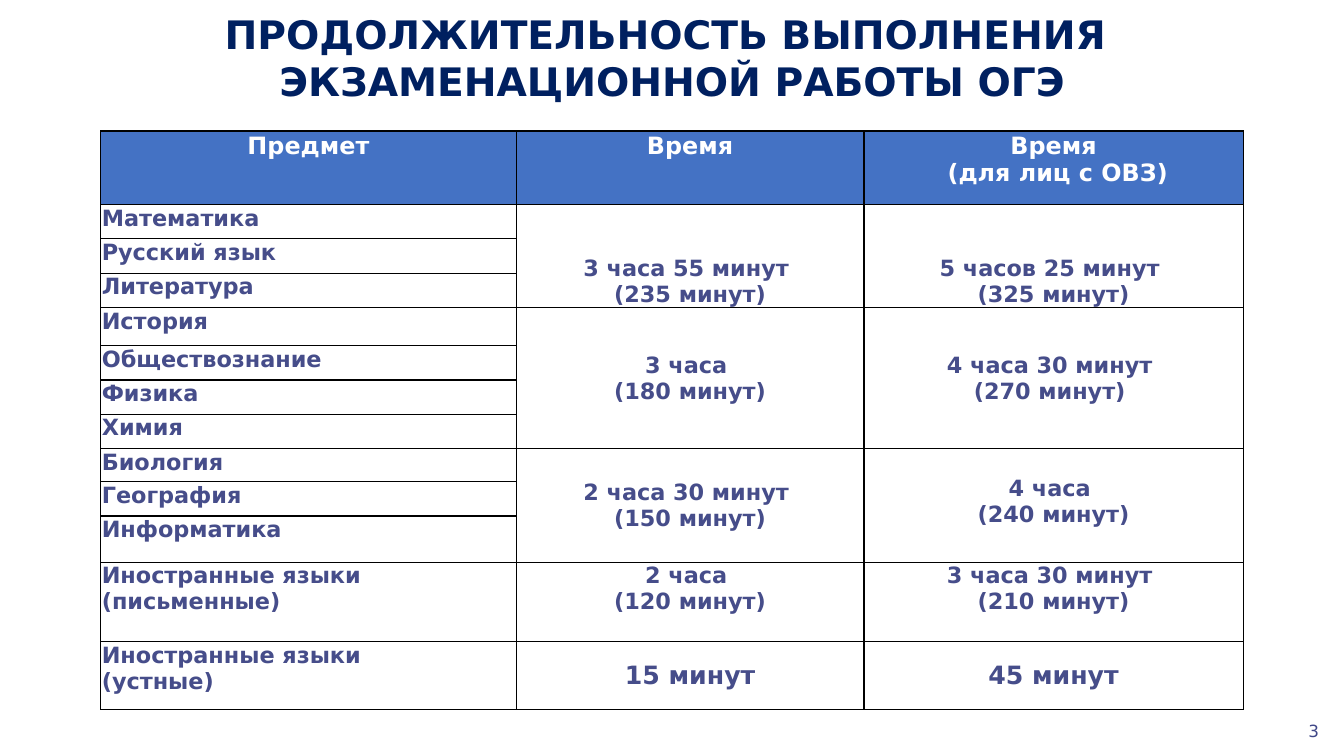
from lxml import etree
from pptx import Presentation
from pptx import util as u
from pptx.dml.color import RGBColor
from pptx.enum import text
from pptx.oxml.ns import qn

FONT = "DejaVu Sans"
COLORS = {
    "title": "002060", "header_fill": "4472C4", "header_text": "FFFFFF",
    "cell_fill": "FFFFFF", "cell_text": "464D8A", "border": "000000",
    "number": "404888",
}
LEFT, CENTER, RIGHT = text.PP_ALIGN.LEFT, text.PP_ALIGN.CENTER, text.PP_ALIGN.RIGHT
TOP, MIDDLE, BOTTOM = (text.MSO_ANCHOR.TOP, text.MSO_ANCHOR.MIDDLE,
                       text.MSO_ANCHOR.BOTTOM)

COLUMN_WIDTHS = [4.12, 3.45, 3.76]
ROW_HEIGHTS = [0.73, 0.34, 0.34, 0.34, 0.38, 0.34, 0.34, 0.34, 0.33, 0.34,
               0.46, 0.79, 0.67]
HEADERS = [["Предмет"], ["Время"], ["Время", " (для лиц с ОВЗ)"]]
CELL_INSET = 0.01
LINE_HEIGHT = 0.26

# Each group: subjects, then (lines, format) for the two time columns
GROUPS = [
    ([["Математика"], ["Русский язык"], ["Литература"]],
     (["3 часа 55 минут ", "(235 минут)"], {"anchor": BOTTOM}),
     (["5 часов 25 минут ", "(325 минут)"], {"anchor": BOTTOM})),
    ([["История"], ["Обществознание"], ["Физика"], ["Химия"]],
     (["3 часа ", "(180 минут)"], {"anchor": MIDDLE}),
     (["4 часа 30 минут ", "(270 минут) "], {"anchor": MIDDLE})),
    ([["Биология"], ["География"], ["Информатика"]],
     (["2 часа 30 минут ", "(150 минут)"], {"anchor": MIDDLE}),
     (["4 часа ", "(240 минут)"], {"top": CELL_INSET + LINE_HEIGHT})),
    ([["Иностранные языки (письменные)"]],
     (["2 часа ", "(120 минут)"], {}),
     (["3 часа 30 минут ", "(210 минут)"], {})),
    ([["Иностранные языки", "(устные)"]],
     (["15 минут"], {"anchor": MIDDLE, "size": 18}),
     (["45 минут"], {"anchor": MIDDLE, "size": 18})),
]


def write_text(frame, lines, *, size, color, bold=False, align=LEFT):
    """Write one paragraph per line with a shared format."""
    for index, line in enumerate(lines):
        para = frame.add_paragraph() if index else frame.paragraphs[0]
        para.alignment = align
        span = para.add_run()
        span.text = line
        span.font.name = FONT
        span.font.size = u.Pt(size)
        span.font.bold = bold
        span.font.color.rgb = RGBColor.from_string(COLORS[color])


def place(shape, box):
    shape.left, shape.top, shape.width, shape.height = map(u.Inches, box)


def add_title(page, box):
    title = page.shapes.title
    place(title, box)
    frame = title.text_frame
    frame.word_wrap = True
    frame.auto_size = text.MSO_AUTO_SIZE.NONE
    frame.vertical_anchor = TOP
    write_text(frame, ["ПРОДОЛЖИТЕЛЬНОСТЬ ВЫПОЛНЕНИЯ ", "ЭКЗАМЕНАЦИОННОЙ РАБОТЫ ОГЭ"],
               size=28, color="title", bold=True, align=CENTER)


def add_page_number(page, box, number):
    frame = page.shapes.add_textbox(*map(u.Inches, box)).text_frame
    frame.word_wrap = True
    frame.vertical_anchor = MIDDLE
    write_text(frame, [number], size=12, color="number", align=RIGHT)


def style_cell(cell, fill):
    """Set the insets, the four borders and the fill."""
    cell.margin_left = cell.margin_right = cell.margin_top = u.Inches(CELL_INSET)
    cell.margin_bottom = 0
    properties = cell._tc.get_or_add_tcPr()
    for side in ("a:lnL", "a:lnR", "a:lnT", "a:lnB"):
        line = etree.SubElement(properties, qn(side), w=str(u.Pt(1)))
        solid = etree.SubElement(line, qn("a:solidFill"))
        etree.SubElement(solid, qn("a:srgbClr"), val=COLORS["border"])
    cell.fill.solid()
    cell.fill.fore_color.rgb = RGBColor.from_string(COLORS[fill])


def write_time(cell, lines, anchor=TOP, top=CELL_INSET, size=16):
    cell.vertical_anchor = anchor
    cell.margin_top = u.Inches(top)
    write_text(cell.text_frame, lines, size=size, color="cell_text",
               bold=True, align=CENTER)


def add_schedule(page, box):
    table = page.shapes.add_table(len(ROW_HEIGHTS), len(COLUMN_WIDTHS),
                                  *map(u.Inches, box)).table
    for column, width in zip(table.columns, COLUMN_WIDTHS):
        column.width = u.Inches(width)
    for index, (row, height) in enumerate(zip(table.rows, ROW_HEIGHTS)):
        row.height = u.Inches(height)
        for cell in row.cells:
            style_cell(cell, "cell_fill" if index else "header_fill")

    # Header row
    for column, lines in enumerate(HEADERS):
        write_text(table.cell(0, column).text_frame, lines, size=17,
                   color="header_text", bold=True, align=CENTER)

    # Subjects on the left, shared durations merged across each group
    first = 1
    for subjects, *times in GROUPS:
        last = first + len(subjects) - 1
        for row, lines in enumerate(subjects, first):
            write_text(table.cell(row, 0).text_frame, lines, size=16,
                       color="cell_text", bold=True)
        for column, (lines, style) in enumerate(times, 1):
            cell = table.cell(first, column)
            if last > first:
                cell.merge(table.cell(last, column))
            write_time(cell, lines, **style)
        first = last + 1


def main():
    deck = Presentation()
    deck.slide_width, deck.slide_height = u.Inches(13.33), u.Inches(7.5)
    page = deck.slides.add_slide(deck.slide_layouts.get_by_name("Title Only"))
    add_title(page, (0, 0.05, 13.33, 1.04))
    add_page_number(page, (10.18, 7.05, 3, 0.4), "3")
    add_schedule(page, (1, 1.3, sum(COLUMN_WIDTHS), sum(ROW_HEIGHTS)))
    deck.save("out.pptx")


if __name__ == "__main__":
    main()
